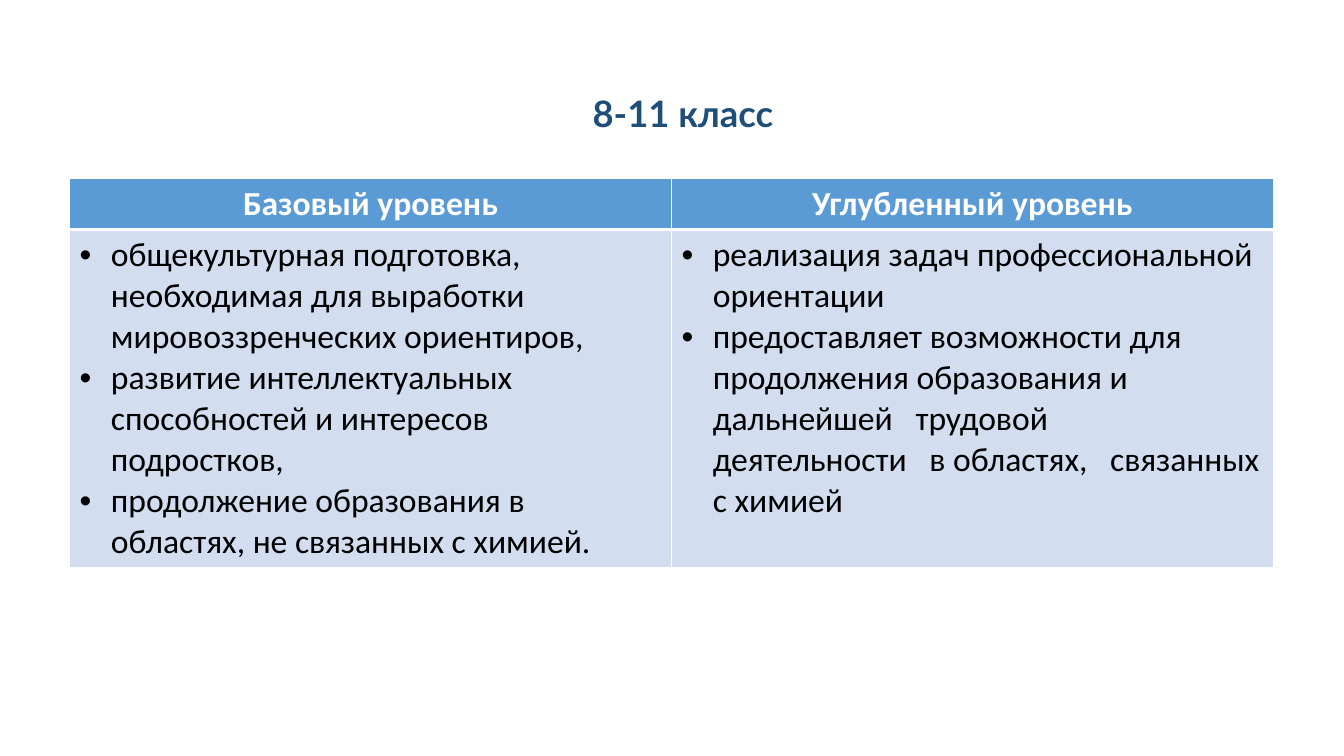
import pptx
import pptx.util
import pptx.dml.color
import pptx.enum.text
import pptx.oxml
import pptx.oxml.ns

Inches, Pt = pptx.util.Inches, pptx.util.Pt
CENTER = pptx.enum.text.PP_ALIGN.CENTER

TITLE = dict(name="Lato", size=Pt(26), bold=True)
HEAD = dict(name="Calibri", size=Pt(24), bold=True)
BODY = dict(name="Calibri", size=Pt(24), bold=False)

LEVELS = {
    "Базовый уровень": [
        "общекультурная подготовка, необходимая для выработки мировоззренческих ориентиров,",
        "развитие интеллектуальных способностей и интересов подростков,",
        "продолжение образования в областях, не связанных с химией.",
    ],
    "Углубленный уровень": [
        "реализация задач профессиональной ориентации",
        "предоставляет возможности для продолжения образования и "
        "дальнейшей   трудовой   деятельности   в областях,   связанных с химией",
    ],
}


def color(code):
    return pptx.dml.color.RGBColor.from_string(code)


def make_xml(text):
    return pptx.oxml.parse_xml(text.replace(">", f" {pptx.oxml.ns.nsdecls('a')}>", 1))


def add_text(para, text, style, code):
    font = para.add_run().font
    para.runs[0].text = text
    for name, value in style.items():
        setattr(font, name, value)
    font.color.rgb = color(code)


def add_bullet(para):
    props = para._p.get_or_add_pPr()
    indent = Inches(0.31)
    props.set("marL", str(indent))
    props.set("indent", str(-indent))
    props.append(make_xml('<a:buFont typeface="Arial"></a:buFont>'))
    props.append(make_xml('<a:buChar char="•"></a:buChar>'))


def fill_cell(cell, code, top, bottom):
    """Give the cell white borders, with top and bottom widths in points, and a fill."""
    props = cell._tc.get_or_add_tcPr()
    for side, width in dict(L=1, R=1, T=top, B=bottom).items():
        props.append(make_xml(
            f'<a:ln{side} w="{Pt(width)}"><a:solidFill><a:srgbClr val="FFFFFF"/>'
            f'</a:solidFill></a:ln{side}>'))
    cell.fill.solid()
    cell.fill.fore_color.rgb = color(code)


def add_title(slide, text):
    box = slide.shapes.add_textbox(Inches(1.11), Inches(0.9), Inches(11.33), Inches(1.17))
    frame = box.text_frame
    frame.word_wrap = True
    for side in ("left", "top", "right", "bottom"):
        setattr(frame, f"margin_{side}", 0)
    para = frame.paragraphs[0]
    para.alignment = CENTER
    para.space_after = Pt(6.3)
    add_text(para, text, TITLE, "1F4E79")


def add_levels(slide, levels):
    table = slide.shapes.add_table(
        2, len(levels), Inches(0.69), Inches(1.77), Inches(11.94), Inches(3.85)).table
    for row, height in zip(table.rows, (0.5, 3.35)):
        row.height = Inches(height)
    for col, (name, goals) in enumerate(levels.items()):
        head, body = table.cell(0, col), table.cell(1, col)
        fill_cell(head, "5B9BD5", top=1, bottom=3)
        fill_cell(body, "D2DEEF", top=3, bottom=1)
        para = head.text_frame.paragraphs[0]
        para.alignment = CENTER
        add_text(para, name, HEAD, "FFFFFF")
        frame = body.text_frame
        for num, goal in enumerate(goals):
            para = frame.add_paragraph() if num else frame.paragraphs[0]
            add_bullet(para)
            add_text(para, goal, BODY, "000000")


def main():
    deck = pptx.Presentation()
    deck.slide_width, deck.slide_height = Inches(13.33), Inches(7.5)
    slide = deck.slides.add_slide(deck.slide_layouts[6])
    add_levels(slide, LEVELS)
    add_title(slide, "8-11 класс")
    deck.save("out.pptx")


if __name__ == "__main__":
    main()
